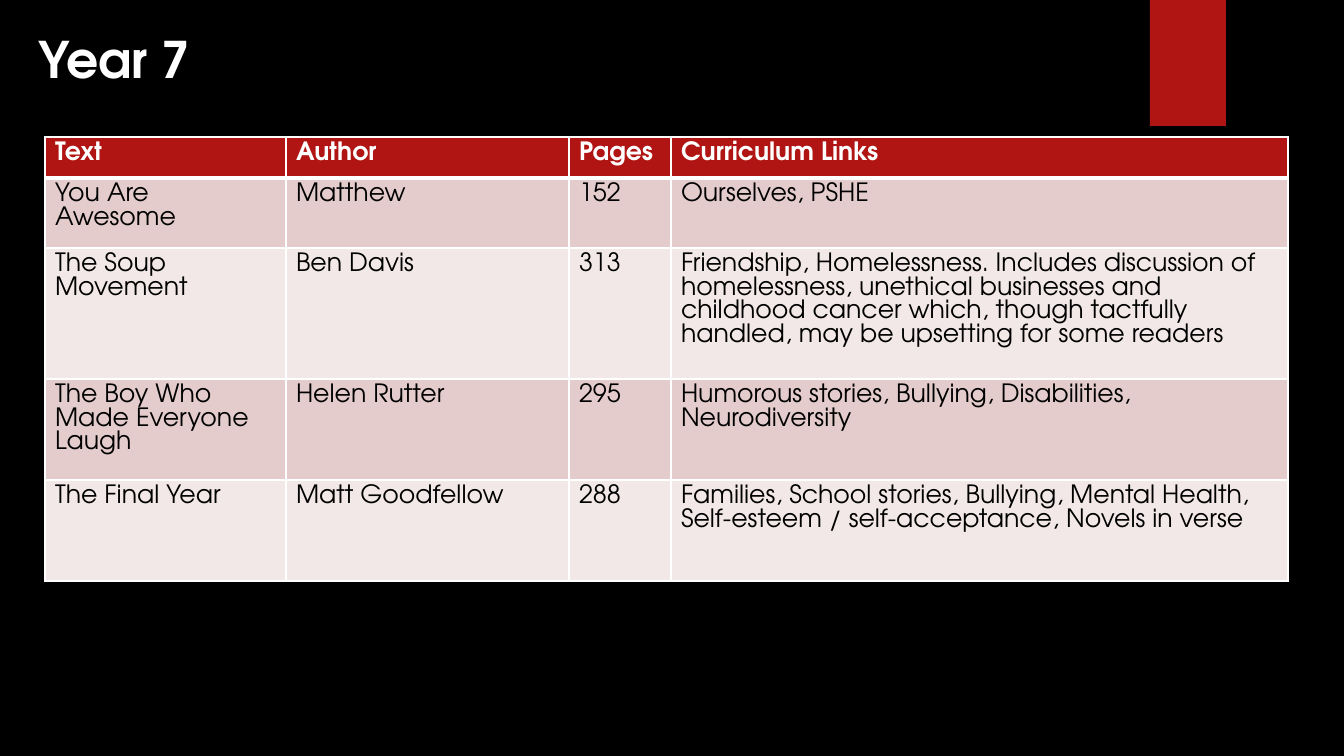
"""Build the Year 7 reading list slide."""
import pptx
import pptx.util
import pptx.dml.color
import pptx.enum.shapes
import pptx.enum.text
import lxml.etree

TITLE = "Year 7"
HEADER = ("Text", "Author", "Pages", "Curriculum Links")
BOOKS = [
    ("You Are Awesome", "Matthew", "152", "Ourselves, PSHE"),
    ("The Soup Movement", "Ben Davis", "313",
     "Friendship, Homelessness. Includes discussion of homelessness, unethical "
     "businesses and childhood cancer which, though tactfully handled, may be "
     "upsetting for some readers"),
    ("The Boy Who Made Everyone Laugh", "Helen Rutter", "295",
     "Humorous stories, Bullying, Disabilities, Neurodiversity"),
    ("The Final Year", "Matt Goodfellow", "288",
     "Families, School stories, Bullying, Mental Health, "
     "Self-esteem / self-acceptance, Novels in verse"),
]
COLORS = {"background": "000000", "accent": "B01513", "light": "FFFFFF",
          "dark": "000000", "odd": "E4CCCC", "even": "F2E8E7"}
FONT = "TeX Gyre Adventor"
SLIDE_SIZE = (1344, 756)
TITLE_BOX = (28, 23, 555, 72)
RIBBON_BOX = (1150, 0, 76, 126)
TABLE_ORIGIN = (45, 137)
COLUMN_WIDTHS = (241, 283, 102, 617)
ROW_HEIGHTS = (41, 70, 131, 101, 101)
EMU_PER_PX = 914400 / 100.8


def px(length):
    return pptx.util.Emu(round(length * EMU_PER_PX))


def color(name):
    return pptx.dml.color.RGBColor.from_string(COLORS[name])


def paint(target, name):
    target.fill.solid()
    target.fill.fore_color.rgb = color(name)


def write(frame, text, size=18, ink="dark", bold=False):
    frame.word_wrap = True
    paragraph = frame.paragraphs[0]
    paragraph.alignment = pptx.enum.text.PP_ALIGN.LEFT
    run = paragraph.add_run()
    run.text = text
    run.font.name = FONT
    run.font.size = pptx.util.Pt(size)
    run.font.bold = bold
    run.font.color.rgb = color(ink)


def add_borders(cell, header_below, header):
    properties = cell._tc.get_or_add_tcPr()
    widths = {"lnL": 1, "lnR": 1, "lnT": 3 if header_below else 1, "lnB": 3 if header else 1}
    for index, (side, width) in enumerate(widths.items()):
        line = lxml.etree.Element(pptx.oxml.ns.qn(f"a:{side}"), w=str(pptx.util.Pt(width)))
        fill = lxml.etree.SubElement(line, pptx.oxml.ns.qn("a:solidFill"))
        lxml.etree.SubElement(fill, pptx.oxml.ns.qn("a:srgbClr"), val=COLORS["light"])
        properties.insert(index, line)


def add_title(slide):
    title = slide.shapes.title
    title.left, title.top, title.width, title.height = map(px, TITLE_BOX)
    title.text_frame.vertical_anchor = pptx.enum.text.MSO_ANCHOR.TOP
    write(title.text_frame, TITLE, size=36, ink="light", bold=True)


def add_ribbon(slide):
    ribbon = slide.shapes.add_shape(
        pptx.enum.shapes.MSO_SHAPE.RECTANGLE, *map(px, RIBBON_BOX))
    ribbon.shadow.inherit = False
    paint(ribbon, "accent")
    ribbon.line.fill.background()


def add_book_table(slide):
    rows = [HEADER, *BOOKS]
    table = slide.shapes.add_table(
        len(rows), len(HEADER), *map(px, TABLE_ORIGIN),
        px(sum(COLUMN_WIDTHS)), px(sum(ROW_HEIGHTS))).table
    for column, width in zip(table.columns, COLUMN_WIDTHS):
        column.width = px(width)
    for row, height in zip(table.rows, ROW_HEIGHTS):
        row.height = px(height)
    for row_index, values in enumerate(rows):
        header = row_index == 0
        band = "accent" if header else ("odd" if row_index % 2 else "even")
        for column_index, value in enumerate(values):
            cell = table.cell(row_index, column_index)
            paint(cell, band)
            add_borders(cell, row_index == 1, header)
            write(cell.text_frame, value, ink="light" if header else "dark", bold=header)


def main():
    presentation = pptx.Presentation()
    presentation.slide_width, presentation.slide_height = map(px, SLIDE_SIZE)
    slide = presentation.slides.add_slide(presentation.slide_layouts[5])
    paint(slide.background, "background")
    add_ribbon(slide)
    add_title(slide)
    add_book_table(slide)
    presentation.save("out.pptx")


if __name__ == "__main__":
    main()
